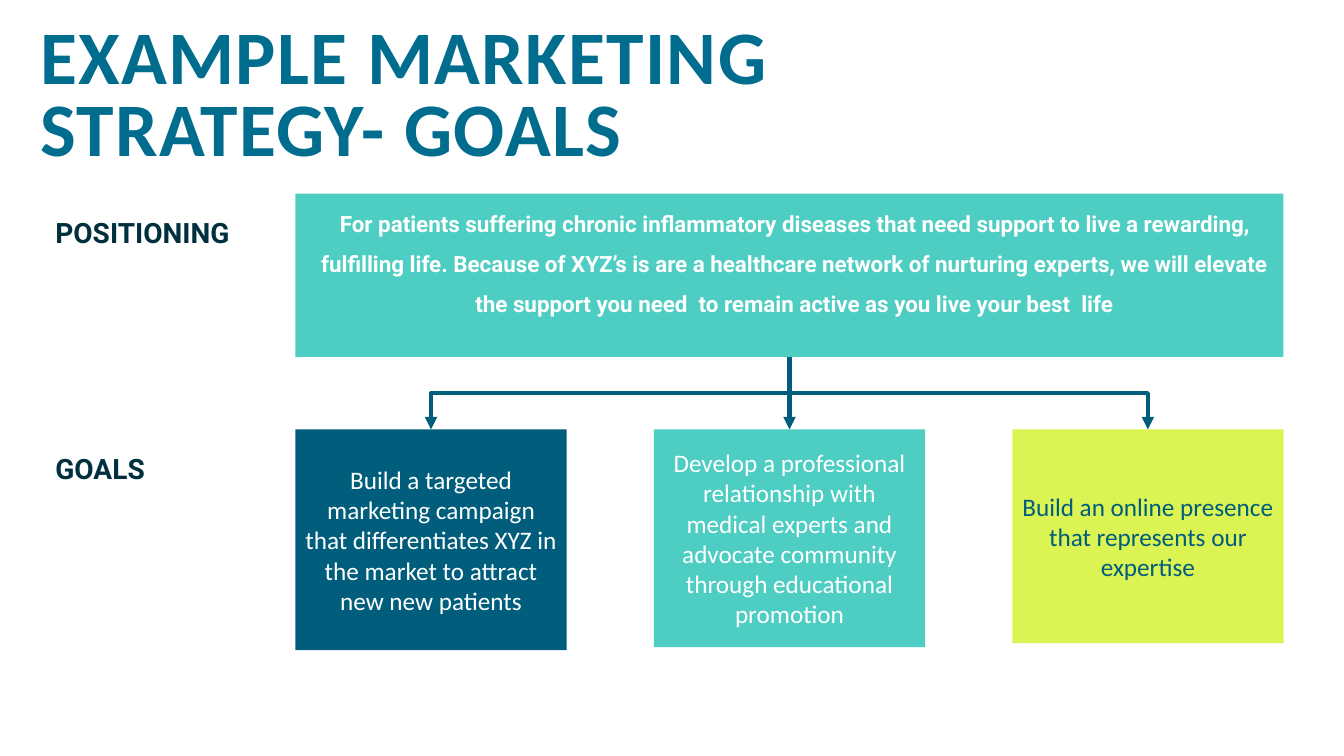
from lxml import etree
from pptx import Presentation
from pptx.dml.color import RGBColor
from pptx.enum.shapes import MSO_CONNECTOR, MSO_SHAPE
from pptx.enum.text import MSO_ANCHOR, MSO_AUTO_SIZE, PP_ALIGN
from pptx.oxml.ns import qn
from pptx.util import Inches, Pt

STRAIGHT, ELBOW = MSO_CONNECTOR.STRAIGHT, MSO_CONNECTOR.ELBOW
RECT = MSO_SHAPE.RECTANGLE
LEFT, CENTER = PP_ALIGN.LEFT, PP_ALIGN.CENTER
TOP, MIDDLE = MSO_ANCHOR.TOP, MSO_ANCHOR.MIDDLE
TOP_SIDE, BOTTOM_SIDE = 0, 2

NAVY, TEAL, LIME, WHITE = "005E7C", "4ECDC3", "DBF353", "FFFFFF"
TITLE_BLUE, INK = "006D8F", "002F3E"

POSITIONING = (
    "For patients suffering chronic inflammatory diseases that need support to live "
    "a rewarding, fulfilling life. Because of XYZ’s is are a healthcare network of "
    "nurturing experts, we will elevate the support you need  to remain active as "
    "you live your best  life"
)
GOALS = [
    ("Build a targeted marketing campaign that differentiates XYZ in the market "
     "to attract new new patients", 2.19, NAVY, WHITE),
    ("Develop a professional relationship with medical experts and advocate "
     "community through educational promotion", 2.16, TEAL, WHITE),
    ("Build an online presence that represents our expertise", 2.12, LIME, NAVY),
]
BOX_LEFT, BOX_TOP, BOX_W, BOX_H = 2.93, 1.92, 9.8, 1.62
GOAL_TOP, GOAL_W = 4.26, 2.69
GOAL_STEP = (BOX_W - GOAL_W) / (len(GOALS) - 1)


def rgb(value):
    return RGBColor.from_string(value)


def write(sp, text, size=18, font="Calibri", color=WHITE, bold=False, align=LEFT,
          anchor=TOP, line=None, after=None, inset=None, spacing=None, bullet=False):
    """Fill a shape with one formatted paragraph and return its text frame."""
    tf = sp.text_frame
    tf.word_wrap = True
    tf.auto_size = MSO_AUTO_SIZE.NONE
    tf.vertical_anchor = anchor
    if inset is not None:
        tf.margin_left = tf.margin_right = Inches(inset)
        tf.margin_top = tf.margin_bottom = Inches(inset)
    p = tf.paragraphs[0]
    p.alignment = align
    if line:
        p.line_spacing = line
    if after:
        p.space_after = Pt(after)
    if bullet:
        add_blank_bullet(p)
    r = p.add_run()
    r.text = text
    r.font.size, r.font.name, r.font.bold = Pt(size), font, bold
    r.font.color.rgb = rgb(color)
    if spacing:
        r.font._element.set("spc", str(spacing * 100))
    return tf


def add_blank_bullet(p):
    """Give the paragraph a hanging indent with an invisible bullet."""
    pPr = p._p.get_or_add_pPr()
    pPr.set("marL", str(Inches(0.1)))
    pPr.set("indent", str(Inches(-0.1)))
    etree.SubElement(pPr, qn("a:buChar")).set("char", " ")


class StrategySlide:
    def __init__(self, prs):
        self.slide = prs.slides.add_slide(prs.slide_layouts[5])
        self.shapes = self.slide.shapes
        self.line_color, self.line_width = NAVY, 3

    def title(self, text, x, y, w, h):
        sp = self.shapes.title
        sp.left, sp.top, sp.width, sp.height = map(Inches, (x, y, w, h))
        write(sp, text, size=54, color=TITLE_BLUE, bold=True, anchor=MIDDLE,
              line=0.8, spacing=1)

    def text(self, text, x, y, w, h, **fmt):
        sp = self.shapes.add_textbox(*map(Inches, (x, y, w, h)))
        return write(sp, text, font="Roboto", bold=True, line=1.5, **fmt)

    def label(self, text, x, y, w, h):
        tf = self.text(text, x, y, w, h, size=20, color=INK)
        tf.auto_size = MSO_AUTO_SIZE.SHAPE_TO_FIT_TEXT

    def box(self, x, y, w, h, fill, text=None, color=WHITE):
        sp = self.shapes.add_shape(RECT, *map(Inches, (x, y, w, h)))
        sp.shadow.inherit = False
        sp.fill.solid()
        sp.fill.fore_color.rgb = rgb(fill)
        sp.line.fill.background()
        if text:
            write(sp, text, color=color, align=CENTER, anchor=MIDDLE)
        return sp

    def arrow(self, kind, x1, y1, x2, y2):
        cx = self.shapes.add_connector(kind, *map(Inches, (x1, y1, x2, y2)))
        cx.line.color.rgb = rgb(self.line_color)
        cx.line.width = Pt(self.line_width)
        etree.SubElement(cx.line._get_or_add_ln(), qn("a:tailEnd")).set("type", "triangle")
        etree.SubElement(cx.element.spPr, qn("a:effectLst"))
        return cx

    def branch(self, x1, y1, x2, y2):
        """Draw an elbow arrow that leaves downwards: a turned, unrotated elbow."""
        mid_x, mid_y = (x1 + x2) / 2, (y1 + y2) / 2
        half_drop, half_span = (y2 - y1) / 2, abs(x2 - x1) / 2
        side = 1 if x2 < x1 else -1
        cx = self.arrow(ELBOW, mid_x - side * half_drop, mid_y - half_span,
                        mid_x + side * half_drop, mid_y + half_span)
        cx.element.spPr.find(qn("a:xfrm")).set("rot", str(side * 90 % 360 * 60000))


def main():
    prs = Presentation()
    prs.slide_width, prs.slide_height = Inches(13.33), Inches(7.5)
    s = StrategySlide(prs)
    s.title("EXAMPLE MARKETING STRATEGY- GOALS", 0.3, 0.16, 10.63, 1.64)

    positioning = s.box(BOX_LEFT, BOX_TOP, BOX_W, BOX_H, TEAL)
    s.text(POSITIONING, BOX_LEFT, 1.9, BOX_W, 1.5, size=16, align=CENTER,
           after=2, inset=0.05, bullet=True)
    s.label("POSITIONING", 0.45, BOX_TOP, 2.48, 0.56)
    s.label("GOALS", 0.45, GOAL_TOP, 2.27, 1.07)

    goals = [s.box(BOX_LEFT + i * GOAL_STEP, GOAL_TOP, GOAL_W, h, fill, text, color)
             for i, (text, h, fill, color) in enumerate(GOALS)]

    start_x, start_y = BOX_LEFT + BOX_W / 2, BOX_TOP + BOX_H
    for i in (0, 2):
        s.branch(start_x, start_y, BOX_LEFT + i * GOAL_STEP + GOAL_W / 2, GOAL_TOP)
    stem = s.arrow(STRAIGHT, start_x, start_y, start_x, GOAL_TOP)
    stem.begin_connect(positioning, BOTTOM_SIDE)
    stem.end_connect(goals[1], TOP_SIDE)

    prs.save("out.pptx")


if __name__ == "__main__":
    main()
